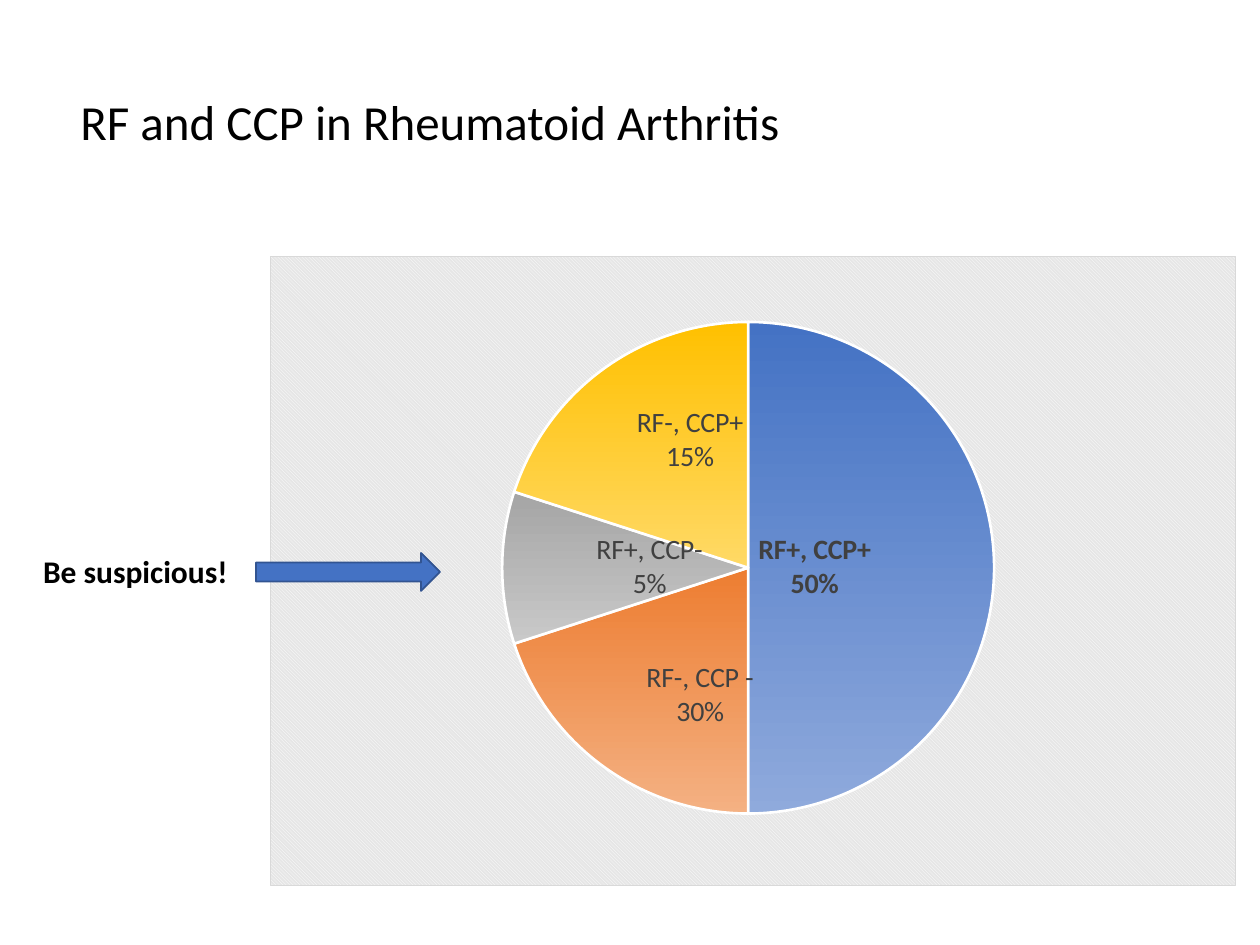
from lxml import etree
from pptx import Presentation
from pptx.chart.data import CategoryChartData
from pptx.dml.color import RGBColor
from pptx.enum.chart import XL_CHART_TYPE, XL_LABEL_POSITION
from pptx.enum.shapes import MSO_SHAPE
from pptx.enum.text import MSO_ANCHOR, PP_ALIGN
from pptx.oxml import parse_xml
from pptx.oxml.ns import nsdecls, qn
from pptx.util import Emu, Pt

PIE = XL_CHART_TYPE.PIE
INSIDE = XL_LABEL_POSITION.INSIDE_END
ARROW = MSO_SHAPE.RIGHT_ARROW
MIDDLE = MSO_ANCHOR.MIDDLE
LEFT, CENTER = PP_ALIGN.LEFT, PP_ALIGN.CENTER
DPI = 126

# name, value, shown share, gradient, label shift, bold
SLICES = [
    ("RF+, CCP+", 50, None, ("4472C4", "8FAADC"), (-0.12, 0), True),
    ("RF-, CCP -", 20, "30%", ("ED7D31", "F4B183"), (0.04, -0.05), False),
    ("RF+, CCP-", 10, "5%", ("A5A5A5", "C9C9C9"), (0.09, 0), False),
    ("RF-, CCP+", 20, "15%", ("FFC000", "FFD966"), (0.03, 0.05), False),
]
BACK = f"""<c:spPr {nsdecls("c", "a")}>
  <a:pattFill prst="dkDnDiag"><a:fgClr><a:srgbClr val="FFFFFF"/></a:fgClr>
    <a:bgClr><a:srgbClr val="E6E6E6"/></a:bgClr></a:pattFill>
  <a:ln w="9525"><a:solidFill><a:srgbClr val="D9D9D9"/></a:solidFill></a:ln>
</c:spPr>"""


def px(*sizes):
    return [Emu(round(size * 914400 / DPI)) for size in sizes]


def tint(code):
    return RGBColor.from_string(code)


def layout(**parts):
    """Manual chart layout; parts are element names and their values."""
    body = "".join(f'<c:{name} val="{val}"/>' for name, val in parts.items())
    return parse_xml(f'<c:layout {nsdecls("c")}><c:manualLayout>{body}'
                     '</c:manualLayout></c:layout>')


class Deck:
    face = "Calibri"

    def __init__(self, width, height):
        self.prs = Presentation()
        self.prs.slide_width, self.prs.slide_height = px(width, height)
        self.slide = self.prs.slides.add_slide(self.prs.slide_layouts[6])

    def style(self, font, size, color="000000", bold=False):
        font.name, font.size, font.bold = self.face, Pt(size), bold
        font.color.rgb = tint(color)

    def text(self, box, words, size, bold=False, align=LEFT, space=1.0):
        frame = self.slide.shapes.add_textbox(*px(*box)).text_frame
        frame.word_wrap = True
        frame.vertical_anchor = MIDDLE
        para = frame.paragraphs[0]
        para.text, para.alignment, para.line_spacing = words, align, space
        self.style(para.font, size, bold=bold)

    def arrow(self, box, fill, line):
        shape = self.slide.shapes.add_shape(ARROW, *px(*box))
        shape.shadow.inherit = False
        shape.fill.solid()
        shape.fill.fore_color.rgb = tint(fill)
        shape.line.color.rgb = tint(line)
        shape.line.width = Pt(1)

    def pie(self, box, slices):
        data = CategoryChartData(number_format="0")
        data.categories = [row[0] for row in slices]
        data.add_series("Series 1", [row[1] for row in slices])
        chart = self.slide.shapes.add_chart(PIE, *px(*box), data).chart
        chart.has_legend = chart.has_title = False
        self.style(chart.font, 10)
        plot = chart.plots[0]
        plot.vary_by_categories = True
        series = plot.series[0]

        labels = series.data_labels
        labels.show_value = False
        labels.show_category_name = labels.show_percentage = True
        labels.number_format, labels.number_format_is_linked = "0%", False
        labels.position = INSIDE
        self.style(labels.font, 16, "404040", True)

        for spot, row in enumerate(slices):
            self.slice(series.points[spot], row)
        self.finish(chart.element, slices)

    def slice(self, point, row):
        name, _, share, shades, _, bold = row
        form = point.format
        form.fill.gradient()
        form.fill.gradient_angle = 270
        for stop, shade in zip(form.fill.gradient_stops, shades):
            stop.color.rgb = tint(shade)
        form.line.color.rgb = tint("FFFFFF")
        form.line.width = Pt(1.5)
        label = point.data_label
        if share:
            label.text_frame.text = f"{name}\n{share}"
            for para in label.text_frame.paragraphs:
                self.style(para.runs[0].font, 16, "404040", bold)
        else:
            self.style(label.font, 16, "404040", bold)
        label.position = INSIDE

    def finish(self, root, slices):
        """Add the backdrop, the plot frame and the label shifts."""
        root.find(qn("c:chart")).addnext(parse_xml(BACK))
        area = root.find(".//" + qn("c:plotArea"))
        for old in area.findall(qn("c:layout")):
            area.remove(old)
        area.insert(0, layout(layoutTarget="inner", xMode="edge", yMode="edge",
                              x=0.24, y=0.1, w=0.51, h=0.79))
        for label, row in zip(root.iter(qn("c:dLbl")), slices):
            for old in label.findall(qn("c:layout")):
                label.remove(old)
            x, y = row[4]
            label.find(qn("c:idx")).addnext(layout(x=x, y=y))
            for key, val in (("Val", 0), ("CatName", 1), ("Percent", 1)):
                label.find(qn("c:show" + key)).set("val", str(val))
            gap = etree.SubElement(label, qn("c:separator"))
            gap.text = "\n"


def main():
    deck = Deck(1260, 945)
    deck.text((68, 33, 1086, 183), "RF and CCP in Rheumatoid Arthritis", 28,
              space=0.9)
    deck.pie((270, 256, 966, 630), SLICES)
    deck.arrow((256, 553, 184, 38), "4472C4", "325491")
    deck.text((15, 546, 241, 50), "Be suspicious!", 18, True, CENTER)
    deck.prs.save("out.pptx")


if __name__ == "__main__":
    main()
